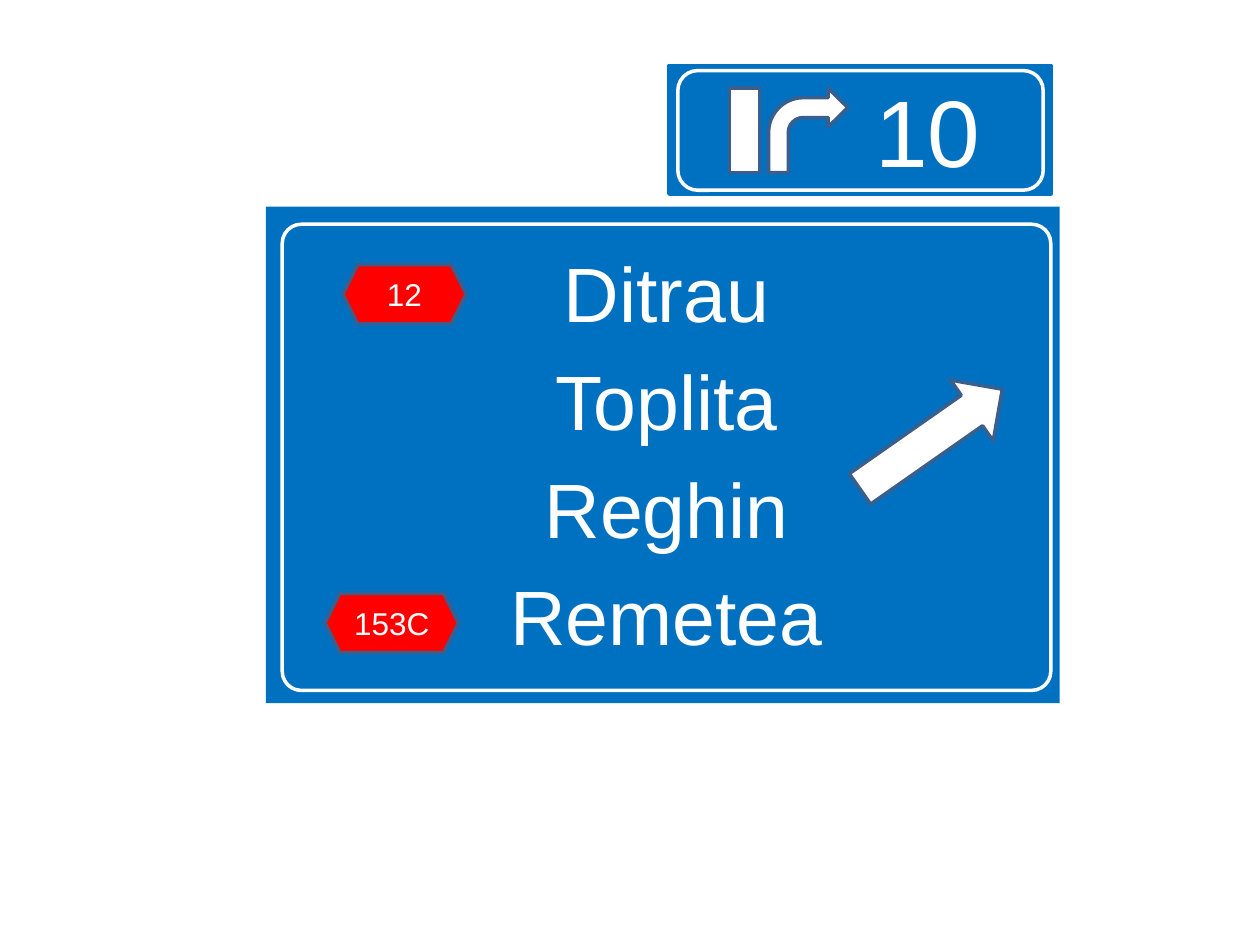
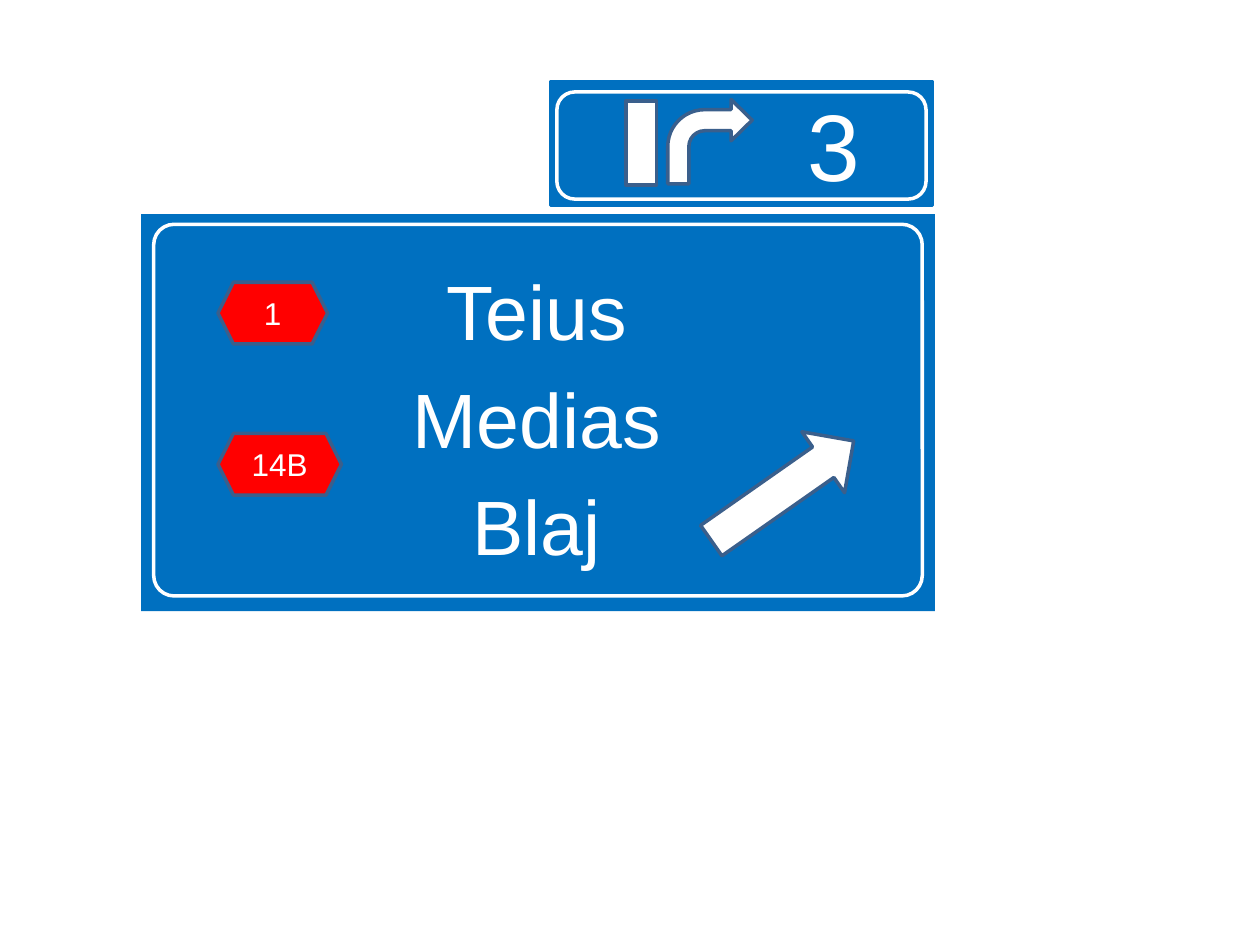
from pptx import Presentation
from pptx.dml.color import RGBColor
from pptx.enum.shapes import MSO_SHAPE
from pptx.enum.text import MSO_ANCHOR, PP_ALIGN
from pptx.util import Inches, Pt
from lxml.etree import SubElement
from pptx.oxml.ns import qn

BLUE, WHITE, RED, EDGE = "0070C0", "FFFFFF", "FF0000", "3A5F8C"


def add_shape(s, kind, at, fill=None, line=None, adj=()):
    sp = s.shapes.add_shape(kind, *[Inches(v) for v in at])
    sp.shadow.inherit = False
    for i, value in enumerate(adj):
        sp.adjustments[i] = value
    if fill:
        sp.fill.solid()
        sp.fill.fore_color.rgb = RGBColor.from_string(fill)
    else:
        sp.fill.background()
    if line:
        sp.line.color.rgb = RGBColor.from_string(line)
        sp.line.width = Pt(2)
    else:
        sp.line.fill.background()
    return sp


def add_text(sp, lines, size, insets=(0.1, 0.05, 0.1, 0.05),
             anchor=MSO_ANCHOR.MIDDLE, before=None):
    tf = sp.text_frame
    tf.word_wrap = True
    tf.vertical_anchor = anchor
    tf.margin_left, tf.margin_top, tf.margin_right, tf.margin_bottom = [
        Inches(v) for v in insets]
    for i, text in enumerate(lines):
        p = tf.paragraphs[0] if i == 0 else tf.add_paragraph()
        p.text = text
        p.alignment = PP_ALIGN.CENTER
        p.font.name = "Arial"
        p.font.size = Pt(size)
        p.font.color.rgb = RGBColor.from_string(WHITE)
        if before:
            # Space before as a percentage of the line
            spacing = SubElement(p._p.get_or_add_pPr(), qn("a:spcBef"))
            SubElement(spacing, qn("a:spcPct")).set("val", str(before * 1000))
            p._p.pPr.insert(0, spacing)


signs = [
    dict(panel=(2.11, 1.64, 6.3, 3.94), insets=(0.16, 0.31, 0.1, 0.24),
         towns=["Ditrau", "Toplita", "Reghin", "Remetea"],
         arrow=(6.7, 3.19), frame=(2.24, 1.78, 6.1, 3.7), corner=0.041,
         roads=[("12", (2.72, 2.1, 0.98, 0.47)),
                ("153C", (2.58, 4.71, 1.06, 0.47))],
         exit_no="10", tab=(5.31, 0.52, 3.03, 1.02), tab_inset=1.18,
         tab_frame=(5.38, 0.56, 2.9, 0.95),
         lane=(5.79, 0.7), turn=(6.1, 0.7, 0.63, 0.67)),
    dict(panel=(1.12, 1.7, 6.3, 3.15), insets=(0.08, 0.39, 0.1, 0.24),
         towns=["Teius", "Medias", "Blaj"],
         arrow=(5.52, 3.6), frame=(1.22, 1.78, 6.1, 2.95), corner=0.055,
         roads=[("1", (1.73, 2.24, 0.87, 0.49)),
                ("14B", (1.73, 3.44, 0.98, 0.49))],
         exit_no="3", tab=(4.37, 0.65, 3.03, 0.98), tab_inset=1.57,
         tab_frame=(4.42, 0.73, 2.93, 0.85),
         lane=(4.97, 0.8), turn=(5.3, 0.79, 0.67, 0.67)),
]

prs = Presentation()
prs.slide_width, prs.slide_height = Inches(10), Inches(7.5)

for sign in signs:
    s = prs.slides.add_slide(prs.slide_layouts[6])

    # Main panel with the towns
    sp = add_shape(s, MSO_SHAPE.RECTANGLE, sign["panel"], BLUE)
    add_text(sp, sign["towns"], 44, sign["insets"], MSO_ANCHOR.TOP, before=20)
    sp = add_shape(s, MSO_SHAPE.RIGHT_ARROW, (*sign["arrow"], 1.38, 0.59),
                   WHITE, EDGE)
    sp.rotation = 325
    add_shape(s, MSO_SHAPE.ROUNDED_RECTANGLE, sign["frame"], line=WHITE,
              adj=[sign["corner"]])

    # Road numbers
    for number, at in sign["roads"]:
        sp = add_shape(s, MSO_SHAPE.HEXAGON, at, RED, EDGE)
        add_text(sp, [number], 18)

    # Exit tab with its number and lane symbol
    sp = add_shape(s, MSO_SHAPE.ROUNDED_RECTANGLE, sign["tab"], BLUE, BLUE, [0])
    add_text(sp, [sign["exit_no"]], 54, (sign["tab_inset"], 0.05, 0.1, 0.05))
    add_shape(s, MSO_SHAPE.RECTANGLE, (*sign["lane"], 0.24, 0.67), WHITE, EDGE)
    add_shape(s, MSO_SHAPE.BENT_ARROW, sign["turn"], WHITE, EDGE,
              [0.25, 0.245, 0.25, 0.438])
    add_shape(s, MSO_SHAPE.ROUNDED_RECTANGLE, sign["tab_frame"], line=WHITE)

prs.save("out.pptx")
